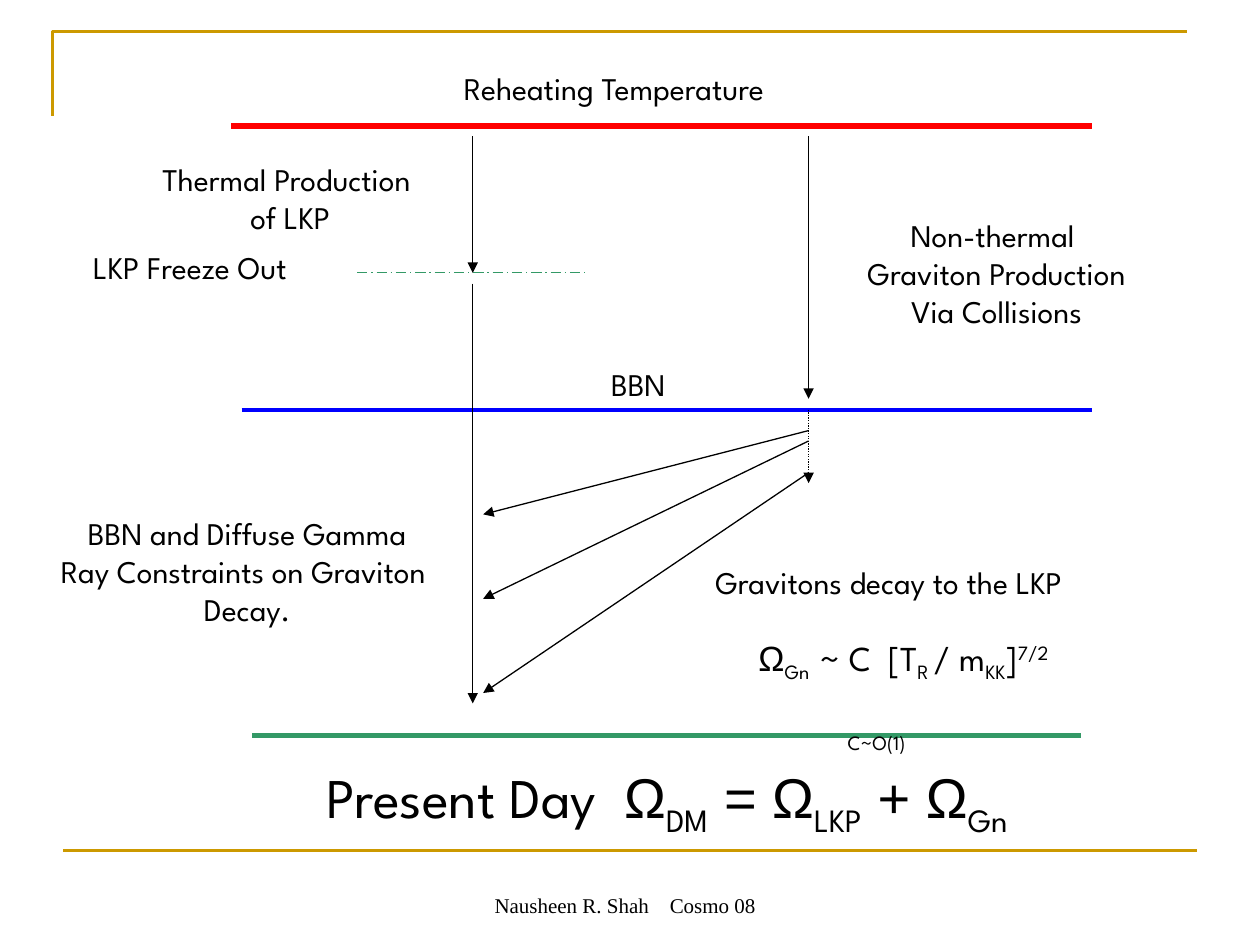
from lxml.etree import SubElement
from pptx import Presentation
from pptx.dml.color import RGBColor
from pptx.enum.dml import MSO_LINE as DASH
from pptx.enum.shapes import MSO_CONNECTOR
from pptx.enum.text import MSO_ANCHOR as ANCHOR, MSO_AUTO_SIZE as AUTO_SIZE, PP_ALIGN as ALIGN
from pptx.oxml.ns import qn
from pptx.util import Cm, Pt

BLACK, GOLD, GREEN = "000000", "CC9900", "339966"
SPARTAN = "League Spartan"
SUB, SUPER = -25, 30

presentation = Presentation()
presentation.slide_width, presentation.slide_height = Cm(25.4), Cm(19.05)
slide = presentation.slides.add_slide(presentation.slide_layouts[6])
color = RGBColor.from_string


def add_text(paragraphs, left, top, width, height, size=18, font=SPARTAN, align=ALIGN.LEFT,
             wrap=True, grow=True, anchor=ANCHOR.TOP):
    """Each paragraph is a string or a list of (text, baseline, font) runs."""
    box = slide.shapes.add_textbox(Cm(left), Cm(top), Cm(width), Cm(height))
    frame = box.text_frame
    frame.word_wrap = wrap
    frame.auto_size = AUTO_SIZE.SHAPE_TO_FIT_TEXT if grow else AUTO_SIZE.NONE
    frame.vertical_anchor = anchor
    for index, runs in enumerate(paragraphs):
        paragraph = frame.add_paragraph() if index else frame.paragraphs[0]
        paragraph.alignment = align
        if isinstance(runs, str):
            runs = [(runs, 0, font)]
        for text, baseline, run_font in runs:
            run = paragraph.add_run()
            run.text = text
            run.font.name, run.font.size = run_font, Pt(size)
            run.font.color.rgb = color(BLACK)
            if baseline:
                run._r.get_or_add_rPr().set("baseline", str(baseline * 1000))
    return frame


def add_line(x1, y1, x2, y2, line_color=BLACK, width=0.75, dash=None, arrow=False):
    connector = slide.shapes.add_connector(MSO_CONNECTOR.STRAIGHT, Cm(x1), Cm(y1), Cm(x2), Cm(y2))
    connector.line.color.rgb = color(line_color)
    connector.line.width = Pt(width)
    if dash:
        connector.line.dash_style = dash
    if arrow:
        SubElement(connector.line._get_or_add_ln(), qn("a:tailEnd"), type="triangle")
    SubElement(connector._element.spPr, qn("a:effectLst"))


# Gold frame: corner at the top left, rule at the bottom
builder = slide.shapes.build_freeform(Cm(1.06), Cm(2.33))
builder.add_line_segments([(Cm(1.06), Cm(0.64)), (Cm(23.92), Cm(0.64))], close=False)
corner = builder.convert_to_shape()
corner.shadow.inherit = False
corner.fill.background()
corner.line.color.rgb = color(GOLD)
corner.line.width = Pt(1.5)
add_line(1.27, 17.15, 23.13 + 1, 17.15, GOLD, 1.5)

# Footer
add_text(["Nausheen R. Shah    Cosmo 08"], 8.58, 17.36, 8.05, 1.27, size=12,
         font="Times New Roman", align=ALIGN.CENTER, grow=False, anchor=ANCHOR.BOTTOM)

# Epochs, from reheating down to the present day
LKP_X, GRAVITON_X = 9.53, 16.3
REHEATING_Y, FREEZE_OUT_Y, BBN_Y, PRESENT_Y = 2.54, 5.5, 8.26, 14.82
add_line(4.66, REHEATING_Y, 22.01, REHEATING_Y, "FF0000", 3)
add_line(7.2, FREEZE_OUT_Y, 11.85, FREEZE_OUT_Y, GREEN, dash=DASH.LONG_DASH_DOT)
add_line(4.87, BBN_Y, 22.01, BBN_Y, "0000FF", 2.25)
add_line(5.08, PRESENT_Y, 21.8, PRESENT_Y, GREEN, 3)

# LKP and graviton histories
add_line(LKP_X, 2.75, LKP_X, FREEZE_OUT_Y, arrow=True)
add_line(LKP_X, 5.72, LKP_X, 14.18, arrow=True)
add_line(GRAVITON_X, 2.75, GRAVITON_X, 8.04, arrow=True)
add_line(GRAVITON_X, BBN_Y, GRAVITON_X, 9.74, dash=DASH.ROUND_DOT, arrow=True)

# Graviton decays into the LKP
for start_y, end_y in [(8.68, 10.37), (8.89, 12.07), (9.53, 13.97)]:
    add_line(GRAVITON_X, start_y, 9.74, end_y, arrow=True)

# Labels
add_text(["Reheating Temperature"], 9.1, 1.27, 7.87, 1.02, wrap=False)
add_text(["BBN"], 12.07, 7.24, 1.9, 1.02)
add_text(["LKP Freeze Out"], 1.63, 4.88, 5.36, 1.02, wrap=False)
add_text(["Thermal Production", " of LKP"], 2.46, 3.1, 6.63, 1.78, align=ALIGN.CENTER, wrap=False)
add_text(["Non-thermal ", "Graviton Production", "Via Collisions"], 16.71, 4.24, 6.76, 2.57,
         align=ALIGN.CENTER, wrap=False)
add_text(["Gravitons decay to the LKP"], 14.17, 11.23, 8.92, 1.02)
add_text(["BBN and Diffuse Gamma", "Ray Constraints on Graviton ", "Decay."],
         0.64, 10.24, 8.69, 3.3, align=ALIGN.CENTER)

# Present-day dark matter density
add_text([[("Present Day  ", 0, SPARTAN), ("Ω", 0, "Arial"), ("DM  ", SUB, SPARTAN),
           ("= Ω", 0, "Arial"), ("LKP  ", SUB, SPARTAN), ("+ Ω", 0, "Arial"),
           ("Gn", SUB, SPARTAN)]],
         4.66, 15.24, 17.58, 1.6, size=32, align=ALIGN.CENTER)

# Graviton density, with the indented note on C
formula = add_text(
    [[("Ω", 0, "Arial"), ("Gn  ", SUB, SPARTAN), ("~ C  [T", 0, SPARTAN), ("R ", SUB, SPARTAN),
      ("/ m", 0, SPARTAN), ("KK", SUB, SPARTAN), ("]", 0, SPARTAN), ("7/2", SUPER, SPARTAN)],
     [("C~O(1)", SUPER, SPARTAN)]],
    15.04, 12.7, 8.26, 2.26, size=20)
note = formula.paragraphs[1]
note.space_before = Pt(24)
note._p.get_or_add_pPr().set("marL", str(Cm(1.8)))

presentation.save("out.pptx")
